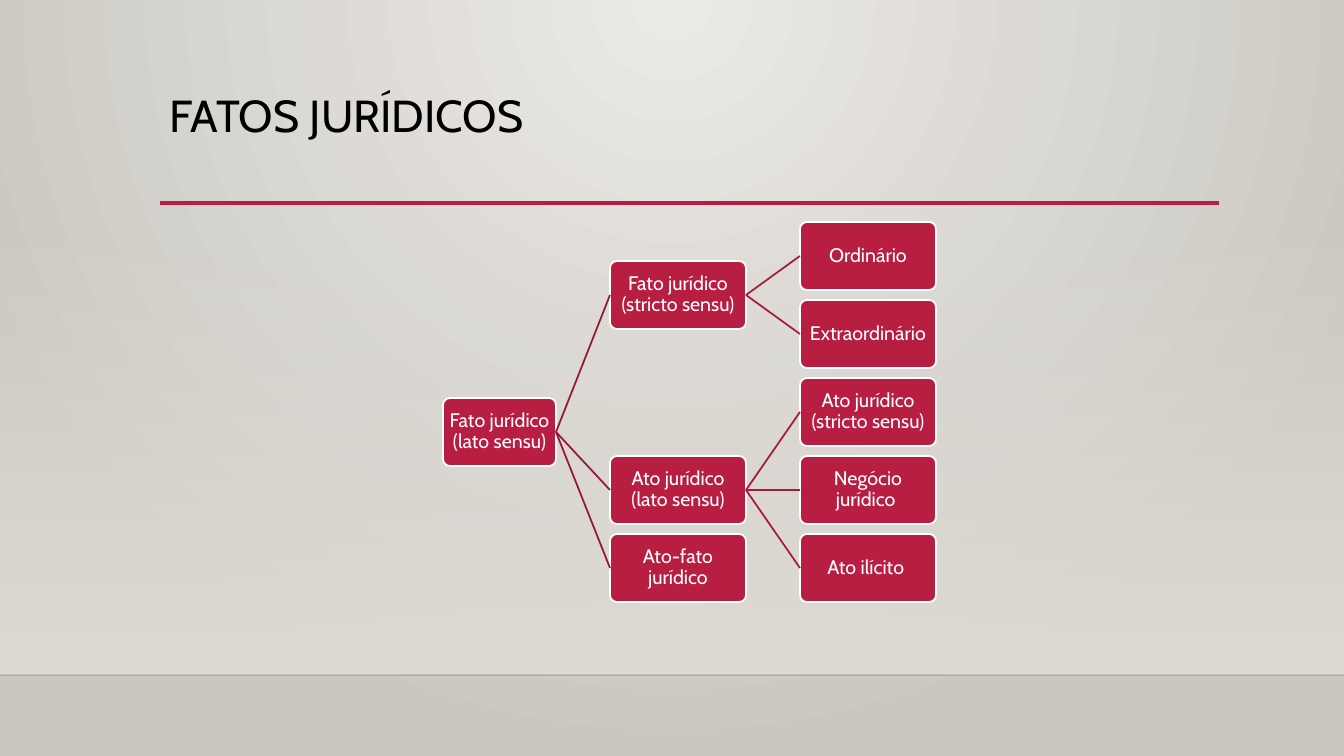
from dataclasses import dataclass

from lxml import etree
from pptx import Presentation
from pptx import util as u
from pptx.dml.color import RGBColor
from pptx.enum import shapes, text
from pptx.oxml import ns

WIDE, HIGH = 1344, 756
SCALE = u.Inches(7.5) / HIGH
FONT = "Cabin"
RED = RGBColor(0xB7, 0x1E, 0x42)
DARK = RGBColor(0x93, 0x18, 0x35)
MID = RGBColor(0xA6, 0x1B, 0x3C)
WHITE = RGBColor(0xFF, 0xFF, 0xFF)
BLACK = RGBColor(0, 0, 0)
EDGE = RGBColor(0, 0, 1)
GLOW = RGBColor(0xEC, 0xEA, 0xE7)
GREY = RGBColor(0xCA, 0xC7, 0xC1)
SAND = RGBColor(0xDF, 0xDB, 0xD5)

# Tree grid: a column is (left, width), rows share one pitch
COLS = ((443, 113), (610, 136), (800, 136))
TOP, PITCH, TALL = 222, 78, 68
LINKS = (DARK, MID)


@dataclass
class Node:
    label: str
    col: int
    row: float
    kids: tuple["Node", ...] = ()


TREE = Node("Fato jurídico (lato sensu)", 0, 2.25, (
    Node("Fato jurídico (stricto sensu)", 1, 0.5, (
        Node("Ordinário", 2, 0),
        Node("Extraordinário", 2, 1),
    )),
    Node("Ato jurídico (lato sensu)", 1, 3, (
        Node("Ato jurídico (stricto sensu)", 2, 2),
        Node("Negócio jurídico ", 2, 3),
        Node("Ato ilícito ", 2, 4),
    )),
    Node("Ato-fato jurídico", 1, 4),
))


def px(size: float) -> u.Emu:
    return u.Emu(round(size * SCALE))


def shade(host, first: RGBColor, last: RGBColor, path: str, alpha: int = 100) -> None:
    """Swap the solid fill inside host for a two-stop gradient."""
    grad = etree.fromstring(
        f'<a:gradFill xmlns:a="{ns.nsuri("a")}" rotWithShape="1"><a:gsLst>'
        f'<a:gs pos="0"><a:srgbClr val="{first}"><a:alpha val="{alpha * 1000}"/></a:srgbClr></a:gs>'
        f'<a:gs pos="100000"><a:srgbClr val="{last}"/></a:gs></a:gsLst>{path}</a:gradFill>')
    old = next(host.iter(ns.qn("a:solidFill")))
    old.getparent().replace(old, grad)


def line(pen, x1: int, y1: int, x2: int, y2: int, color: RGBColor, width: float):
    link = pen.add_connector(shapes.MSO_CONNECTOR.STRAIGHT, px(x1), px(y1), px(x2), px(y2))
    link.line.color.rgb = color
    link.line.width = u.Pt(width)
    etree.SubElement(link.element.spPr, ns.qn("a:effectLst"))
    return link


def write(frame, words: str, size: int, color: RGBColor) -> None:
    frame.word_wrap = True
    para = frame.paragraphs[0]
    para.line_spacing = 0.9
    run = para.add_run()
    run.text = words
    run.font.name = FONT
    run.font.size = u.Pt(size)
    run.font.color.rgb = color


def box(pen, node: Node):
    left, width = COLS[node.col]
    top = TOP + round(PITCH * node.row)
    card = pen.add_shape(shapes.MSO_SHAPE.ROUNDED_RECTANGLE,
                         px(left), px(top), px(width), px(TALL))
    card.adjustments[0] = 0.1
    card.shadow.inherit = False
    card.fill.solid()
    card.fill.fore_color.rgb = RED
    card.line.color.rgb = WHITE
    card.line.width = u.Pt(1.25)
    frame = card.text_frame
    frame.margin_left = frame.margin_right = px(3)
    frame.margin_top = frame.margin_bottom = px(3)
    frame.vertical_anchor = text.MSO_ANCHOR.MIDDLE
    write(frame, node.label, 14, WHITE)
    frame.paragraphs[0].alignment = text.PP_ALIGN.CENTER
    return card


def grow(pen, node: Node):
    """Draw a node, its branches and the links between them."""
    card = box(pen, node)
    for kid in node.kids:
        leaf = grow(pen, kid)
        link = line(pen, 0, 0, 0, 0, LINKS[node.col], 1.25)
        link.begin_connect(card, 3)
        link.end_connect(leaf, 1)
    return card


def main() -> None:
    deck = Presentation()
    deck.slide_width, deck.slide_height = px(WIDE), px(HIGH)
    slide = deck.slides.add_slide(deck.slide_layouts[6])
    pen = slide.shapes

    # Background glow and lower wall
    slide.background.fill.solid()
    shade(slide.element, GLOW, GREY,
          '<a:path path="circle"><a:fillToRect l="43000" t="0" r="43000" b="100000"/></a:path>')
    wall = pen.add_shape(shapes.MSO_SHAPE.RECTANGLE, 0, px(223), px(WIDE), px(452))
    wall.shadow.inherit = False
    wall.line.fill.background()
    wall.fill.solid()
    shade(wall.element.spPr, SAND, SAND, '<a:lin ang="5400000" scaled="0"/>', 0)
    floor = line(pen, 0, 675, WIDE, 675, EDGE, 1)
    tint = next(floor.element.spPr.iter(ns.qn("a:srgbClr")))
    etree.SubElement(tint, ns.qn("a:alpha")).set("val", "20000")

    # Title and rule
    line(pen, 160, 203, 1219, 203, RED, 2.5)
    title = pen.add_textbox(px(160), px(89), px(1058), px(116))
    write(title.text_frame, "FATOS JURÍDICOS", 32, BLACK)

    # Tree of legal facts
    grow(pen, TREE)
    deck.save("out.pptx")


if __name__ == "__main__":
    main()
